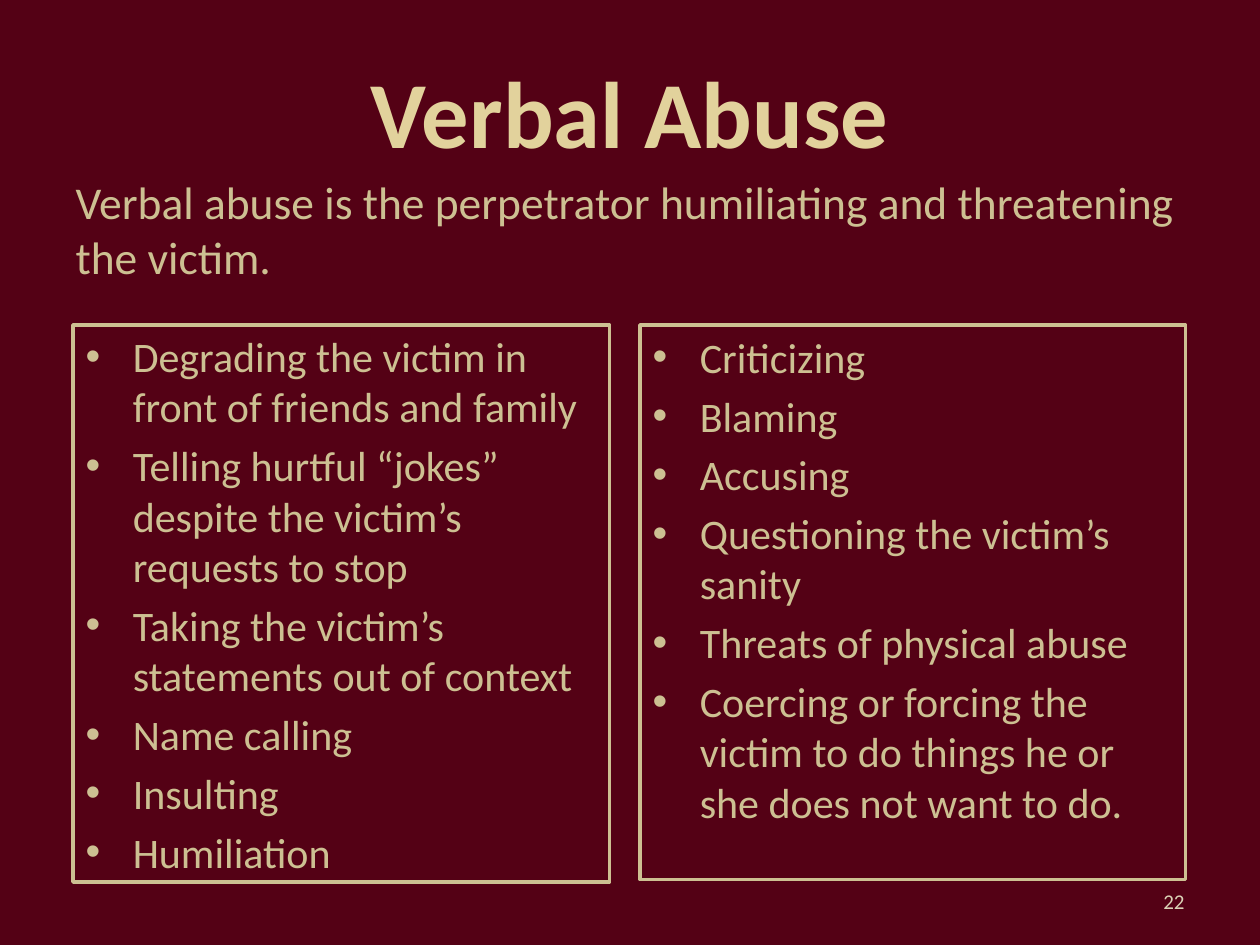
"""Build the "Verbal Abuse" slide: a title, a definition and two boxed lists."""
from pptx import Presentation
from pptx.dml.color import RGBColor
from pptx.enum.text import MSO_ANCHOR as Anchor, MSO_AUTO_SIZE as AutoSize, PP_ALIGN as Align
from pptx.util import Cm, Pt

MAROON = RGBColor(0x54, 0x01, 0x15)
GOLD = RGBColor(0xE2, 0xD2, 0x9C)
SAND = RGBColor(0xCD, 0xC0, 0x92)
PALE = RGBColor(0xDB, 0xD2, 0xB6)
FONT = "Calibri"
COMPARISON_LAYOUT = 4

TITLE = "Verbal Abuse"
DEFINITION = "Verbal abuse is the perpetrator humiliating and threatening the victim."
PAGE = "22"
LEFT_LIST = [
    "Degrading the victim in front of friends and family",
    "Telling hurtful “jokes” despite the victim’s requests to stop",
    "Taking the victim’s statements out of context",
    "Name calling",
    "Insulting",
    "Humiliation",
]
RIGHT_LIST = [
    "Criticizing",
    "Blaming",
    "Accusing",
    "Questioning the victim’s sanity",
    "Threats of physical abuse",
    "Coercing or forcing the victim to do things he or she does not want to do.",
]
LISTS = [
    (2, LEFT_LIST, (1.47, 6.55, 10.82, 11.23), Anchor.MIDDLE),
    (4, RIGHT_LIST, (12.9, 6.55, 11, 11.18), Anchor.TOP),
]


def place(sp, box):
    sp.left, sp.top, sp.width, sp.height = (Cm(v) for v in box)


def write(sp, lines, size, color, anchor, align=Align.LEFT, bold=False):
    tf = sp.text_frame
    tf.text = "\n".join(lines)
    tf.word_wrap = True
    tf.auto_size = AutoSize.NONE
    tf.vertical_anchor = anchor
    for p in tf.paragraphs:
        p.alignment = align
        for r in p.runs:
            r.font.name = FONT
            r.font.size = Pt(size)
            r.font.bold = bold
            r.font.color.rgb = color


def main():
    prs = Presentation()
    prs.slide_width, prs.slide_height = Cm(25.4), Cm(19.05)
    s = prs.slides.add_slide(prs.slide_layouts[COMPARISON_LAYOUT])
    s.background.fill.solid()
    s.background.fill.fore_color.rgb = MAROON
    holders = {sp.placeholder_format.idx: sp for sp in s.placeholders}

    place(holders[0], (1.27, 0.64, 22.86, 3.18))
    write(holders[0], [TITLE], 54, GOLD, Anchor.MIDDLE, Align.CENTER, True)
    place(holders[1], (1.27, 3.38, 22.86, 1.93))
    write(holders[1], [DEFINITION], 26, SAND, Anchor.TOP)

    for idx, items, box, anchor in LISTS:
        sp = holders[idx]
        place(sp, box)
        sp.fill.solid()
        sp.fill.fore_color.rgb = MAROON
        sp.line.color.rgb = SAND
        sp.line.width = Pt(2)
        write(sp, items, 24, SAND, anchor)

    unused = holders[3].element
    unused.getparent().remove(unused)

    number = s.shapes.add_textbox(Cm(18.21), Cm(17.65), Cm(5.92), Cm(1.02))
    write(number, [PAGE], 12, PALE, Anchor.MIDDLE, Align.RIGHT)
    prs.save("out.pptx")


if __name__ == "__main__":
    main()
